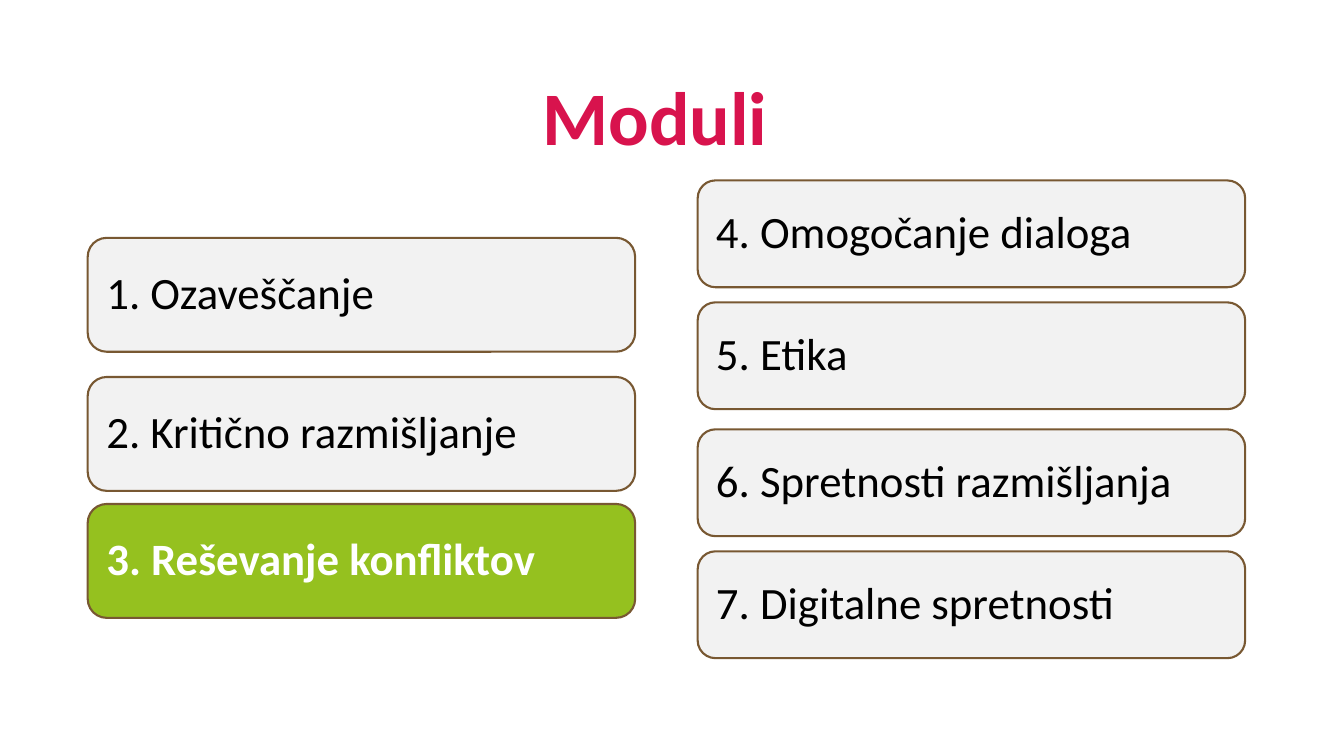
from pptx import Presentation
from pptx.dml.color import RGBColor
from pptx.enum.shapes import MSO_SHAPE
from pptx.enum.text import MSO_ANCHOR, PP_ALIGN
from pptx.util import Emu, Pt

EMU_PER_PX = 9144  # 100 px to the inch
COLORS = {
    "title": "D8134D",
    "card": "F2F2F2",
    "active": "95C11F",
    "border": "785832",
    "text": "000000",
    "active_text": "FFFFFF",
}
CARD_WIDTH = 543
ACTIVE = "3. Reševanje konfliktov"
# (left, card height, [(top, label), ...])
COLUMNS = [
    (87, 113, [
        (236, "1. Ozaveščanje"),
        (374, "2. Kritično razmišljanje"),
        (500, ACTIVE),
    ]),
    (692, 106, [
        (179, "4. Omogočanje dialoga"),
        (300, "5. Etika"),
        (426, "6. Spretnosti razmišljanja"),
        (547, "7. Digitalne spretnosti"),
    ]),
]


def px(n):
    return Emu(n * EMU_PER_PX)


def rgb(name):
    return RGBColor.from_string(COLORS[name])


def write(tf, text, *, size, color, bold=False, align=PP_ALIGN.LEFT,
          anchor=MSO_ANCHOR.MIDDLE, inset=None):
    tf.word_wrap = True
    tf.vertical_anchor = anchor
    if inset is not None:
        tf.margin_left = tf.margin_right = px(inset)
        tf.margin_top = tf.margin_bottom = px(inset)
    p = tf.paragraphs[0]
    p.alignment = align
    p.line_spacing = 0.9
    r = p.add_run()
    r.text = text
    r.font.name = "Calibri"
    r.font.size = Pt(size)
    r.font.bold = bold
    r.font.color.rgb = rgb(color)


class ModuleSlide:
    def __init__(self, prs):
        self.s = prs.slides.add_slide(prs.slide_layouts[6])

    def title(self, text, *box):
        sp = self.s.shapes.add_textbox(*map(px, box))
        write(sp.text_frame, text, size=54, color="title", bold=True,
              align=PP_ALIGN.CENTER, anchor=MSO_ANCHOR.BOTTOM)

    def card(self, text, *box, active=False):
        sp = self.s.shapes.add_shape(MSO_SHAPE.ROUNDED_RECTANGLE, *map(px, box))
        sp.shadow.inherit = False
        sp.fill.solid()
        sp.fill.fore_color.rgb = rgb("active" if active else "card")
        sp.line.color.rgb = rgb("border")
        sp.line.width = Pt(1.5)
        write(sp.text_frame, text, size=32, bold=active, inset=13,
              color="active_text" if active else "text")


def main():
    prs = Presentation()
    prs.slide_width, prs.slide_height = px(1333), px(750)
    slide = ModuleSlide(prs)
    slide.title("Moduli", 1, -30, 1297, 195)
    for left, height, cards in COLUMNS:
        for top, label in cards:
            slide.card(label, left, top, CARD_WIDTH, height, active=label == ACTIVE)
    prs.save("out.pptx")


if __name__ == "__main__":
    main()
